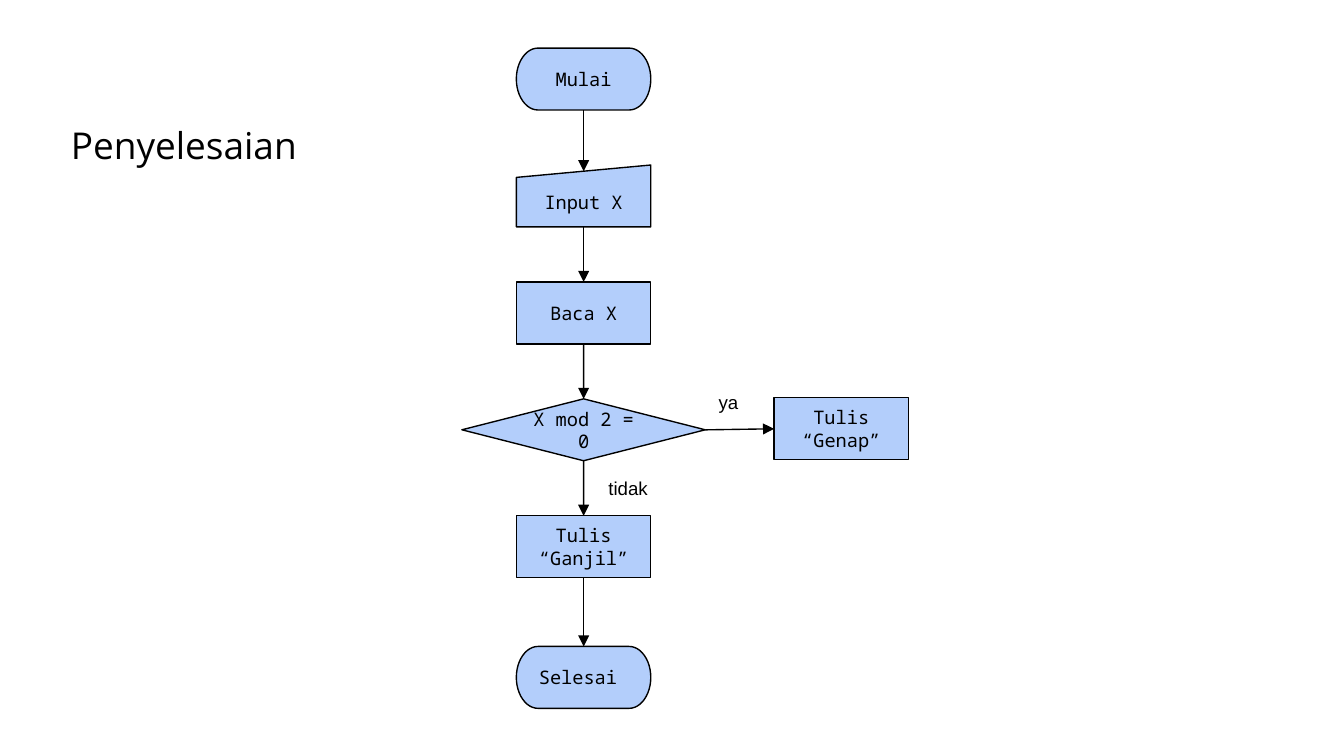
from lxml import etree
from pptx import Presentation
from pptx.dml.color import RGBColor
from pptx.enum.shapes import MSO_CONNECTOR, MSO_SHAPE
from pptx.enum.text import MSO_ANCHOR, MSO_AUTO_SIZE, PP_ALIGN
from pptx.oxml.ns import qn
from pptx.util import Cm, Pt

STRAIGHT = MSO_CONNECTOR.STRAIGHT
TERMINATOR = MSO_SHAPE.FLOWCHART_TERMINATOR
MANUAL_INPUT = MSO_SHAPE.FLOWCHART_MANUAL_INPUT
PROCESS = MSO_SHAPE.FLOWCHART_PROCESS
DECISION = MSO_SHAPE.FLOWCHART_DECISION
TOP, MIDDLE = MSO_ANCHOR.TOP, MSO_ANCHOR.MIDDLE
LEFT, CENTER = PP_ALIGN.LEFT, PP_ALIGN.CENTER
NO_FIT, GROW = MSO_AUTO_SIZE.NONE, MSO_AUTO_SIZE.SHAPE_TO_FIT_TEXT

# Connection sites of the flowchart shapes
SITE_TOP, SITE_LEFT, SITE_BOTTOM, SITE_RIGHT = range(4)

COLORS = {"ink": "000000", "node": "B3CEFB", "background": "FFFFFF"}

# Flowchart grid, in centimetres
CENTER_X = 11.03
NODE_WIDTH, NODE_HEIGHT = 2.54, 1.17
FIRST_TOP, STEP = 0.91, 2.21


class FlowchartSlide:
    def __init__(self, presentation):
        self.slide = presentation.slides.add_slide(presentation.slide_layouts[5])
        background = self.slide.background.fill
        background.solid()
        background.fore_color.rgb = self.color("background")

    def color(self, name):
        return RGBColor.from_string(COLORS[name])

    def set_text(self, frame, text, font, size, align=LEFT):
        frame.text = text
        paragraph = frame.paragraphs[0]
        paragraph.alignment = align
        paragraph.font.name = font
        paragraph.font.size = Pt(size)
        paragraph.font.color.rgb = self.color("ink")

    def title(self, text, left, top, width, height):
        title = self.slide.shapes.title
        title.left, title.top = Cm(left), Cm(top)
        title.width, title.height = Cm(width), Cm(height)
        frame = title.text_frame
        frame.margin_left = frame.margin_right = Cm(0.25)
        frame.margin_top = frame.margin_bottom = Cm(0.25)
        frame.vertical_anchor = TOP
        frame.auto_size = NO_FIT
        self.set_text(frame, text, "Open Sans", 19.8)

    def node(self, kind, text, top, center=CENTER_X, width=NODE_WIDTH):
        shape = self.slide.shapes.add_shape(
            kind, Cm(center - width / 2), Cm(top), Cm(width), Cm(NODE_HEIGHT))
        shape.shadow.inherit = False
        shape.fill.solid()
        shape.fill.fore_color.rgb = self.color("node")
        shape.line.color.rgb = self.color("ink")
        shape.line.width = Pt(0.75)
        frame = shape.text_frame
        frame.word_wrap = True
        frame.vertical_anchor = MIDDLE
        if kind == DECISION:
            frame.margin_left = frame.margin_right = 0
            frame.margin_top = frame.margin_bottom = 0
        self.set_text(frame, text, "Noto Sans Mono", 10, CENTER)
        return shape

    def arrow(self, source, target, start=SITE_BOTTOM, end=SITE_TOP):
        connector = self.slide.shapes.add_connector(STRAIGHT, 0, 0, 0, 0)
        connector.begin_connect(source, start)
        connector.end_connect(target, end)
        if target.auto_shape_type == MANUAL_INPUT:
            # The slanted edge is a tenth of the height lower at its middle
            connector.end_y = target.top + target.height // 10
        connector.line.color.rgb = self.color("ink")
        connector.line.width = Pt(0.75)
        properties = connector.element.spPr
        etree.SubElement(properties.find(qn("a:ln")), qn("a:tailEnd"), type="triangle")
        etree.SubElement(properties, qn("a:effectLst"))

    def label(self, text, left, top, width):
        box = self.slide.shapes.add_textbox(Cm(left), Cm(top), Cm(width), Cm(0.69))
        box.text_frame.word_wrap = False
        box.text_frame.auto_size = GROW
        self.set_text(box.text_frame, text, "Arial", 10)


def main():
    presentation = Presentation()
    presentation.slide_width, presentation.slide_height = Cm(25.4), Cm(14.29)
    chart = FlowchartSlide(presentation)

    # Title
    chart.title("Penyelesaian", 1.09, 2.06, 23.22, 1.09)

    # Main column
    steps = [
        (TERMINATOR, "Mulai", NODE_WIDTH),
        (MANUAL_INPUT, "Input X", NODE_WIDTH),
        (PROCESS, "Baca X", NODE_WIDTH),
        (DECISION, "X mod 2 = 0", 4.6),
        (PROCESS, "Tulis “Ganjil”", NODE_WIDTH),
    ]
    nodes = [chart.node(kind, text, FIRST_TOP + row * STEP, width=width)
             for row, (kind, text, width) in enumerate(steps)]
    nodes.append(chart.node(TERMINATOR, "Selesai ", 12.22))
    for source, target in zip(nodes, nodes[1:]):
        chart.arrow(source, target)

    # Branch for even numbers
    decision = nodes[3]
    even = chart.node(PROCESS, "Tulis “Genap”", 7.52, center=15.9)
    chart.arrow(decision, even, SITE_RIGHT, SITE_LEFT)

    # Branch labels
    chart.label("ya", 13.33, 7.26, 0.89)
    chart.label("tidak", 11.25, 8.89, 1.27)

    presentation.save("out.pptx")


if __name__ == "__main__":
    main()
